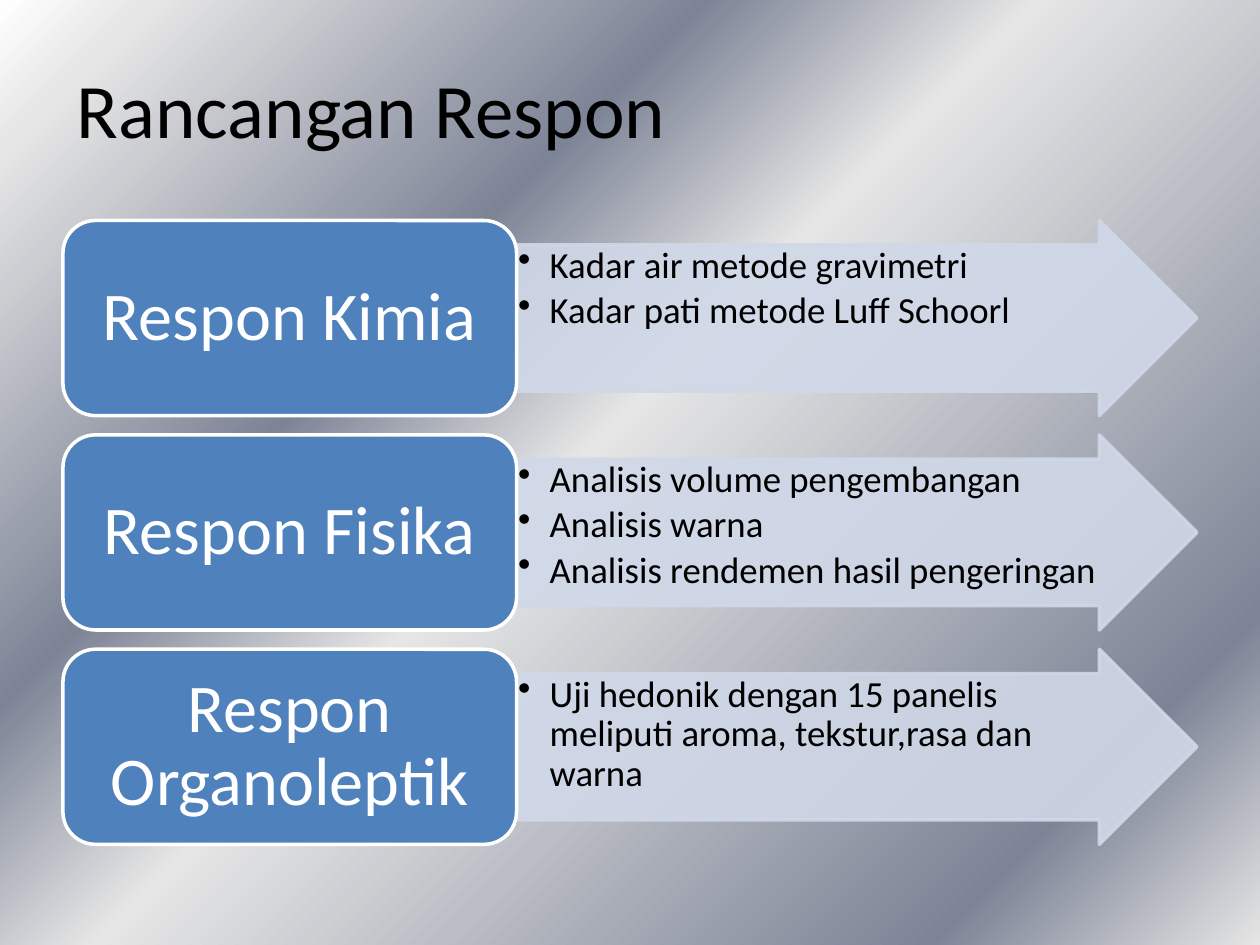
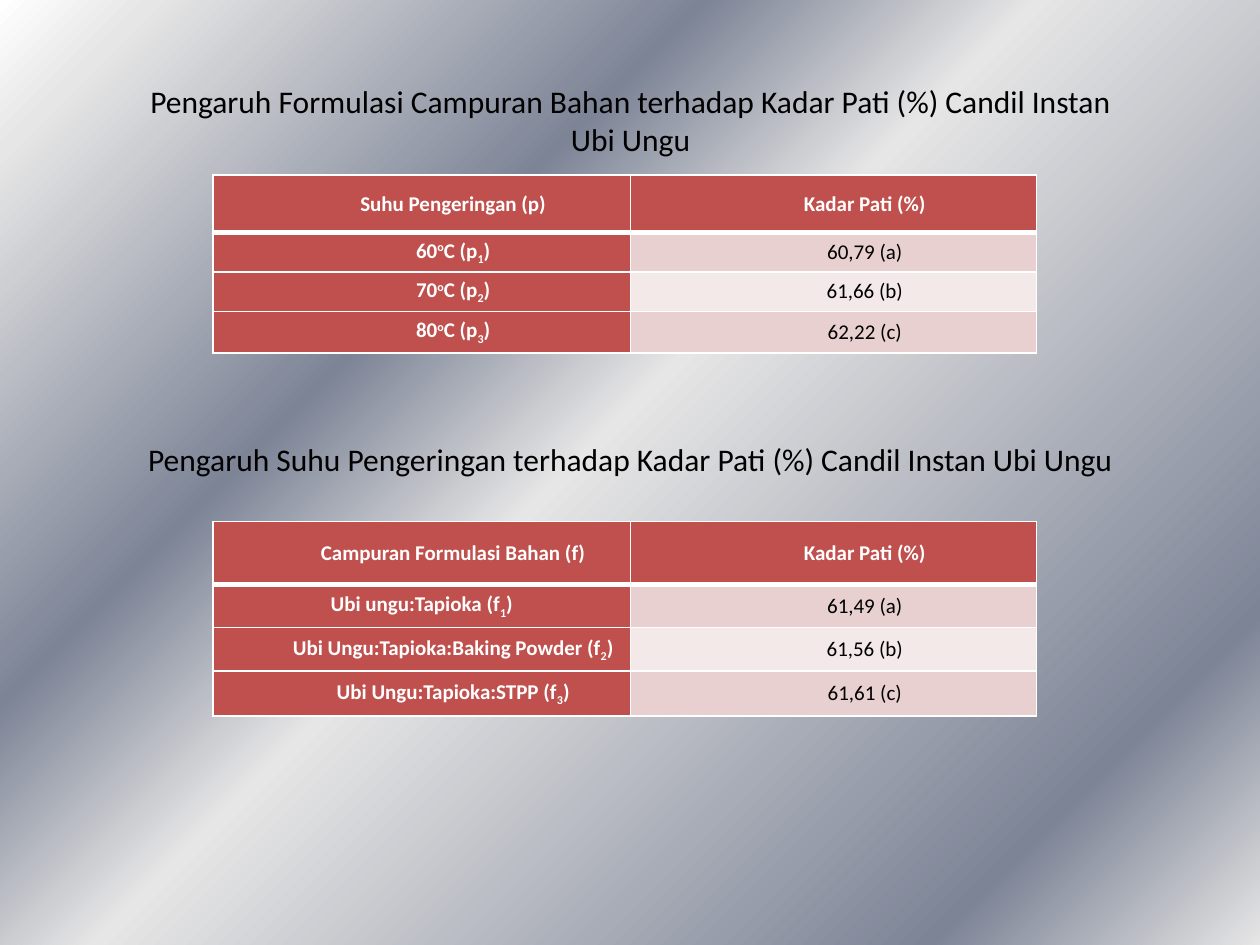
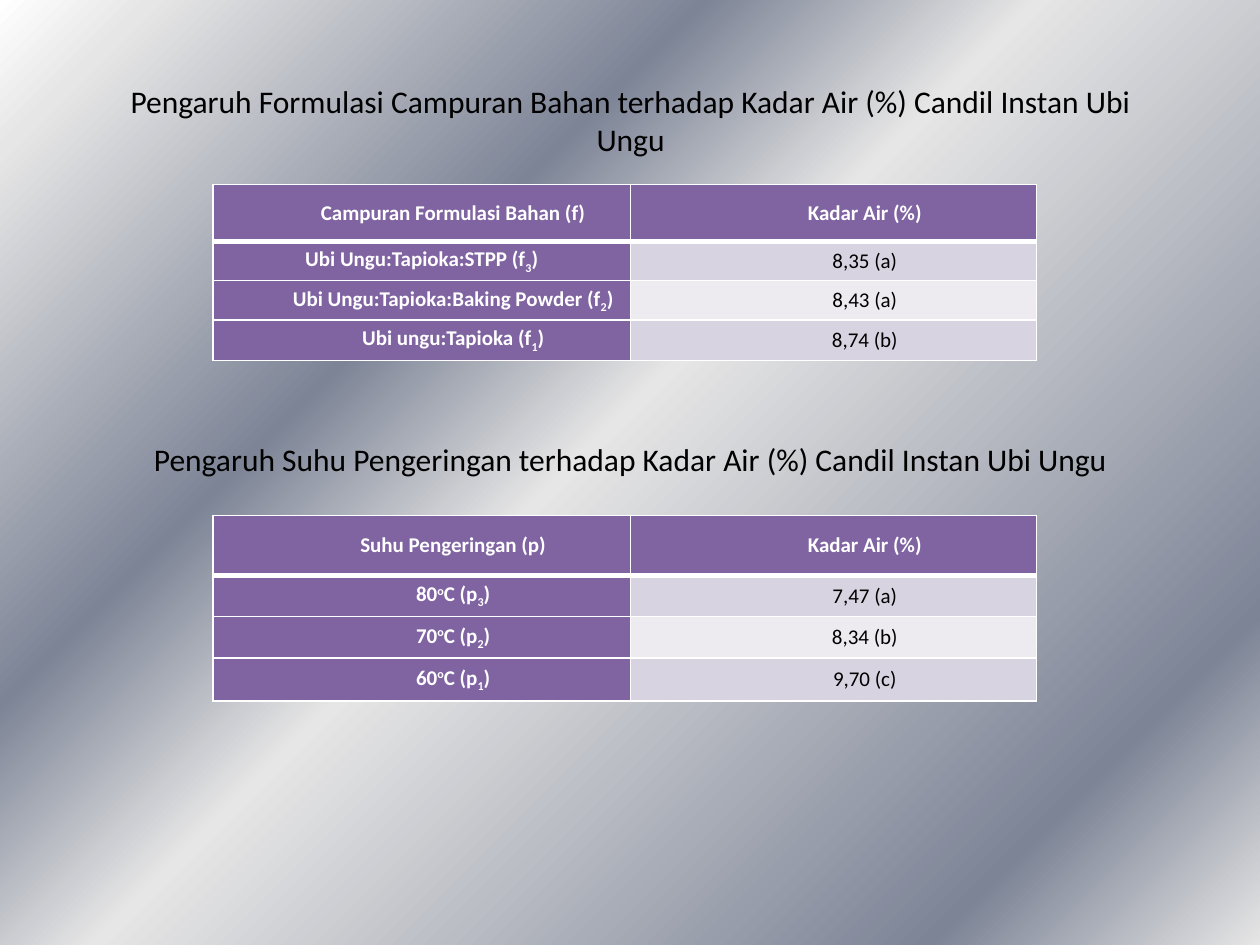
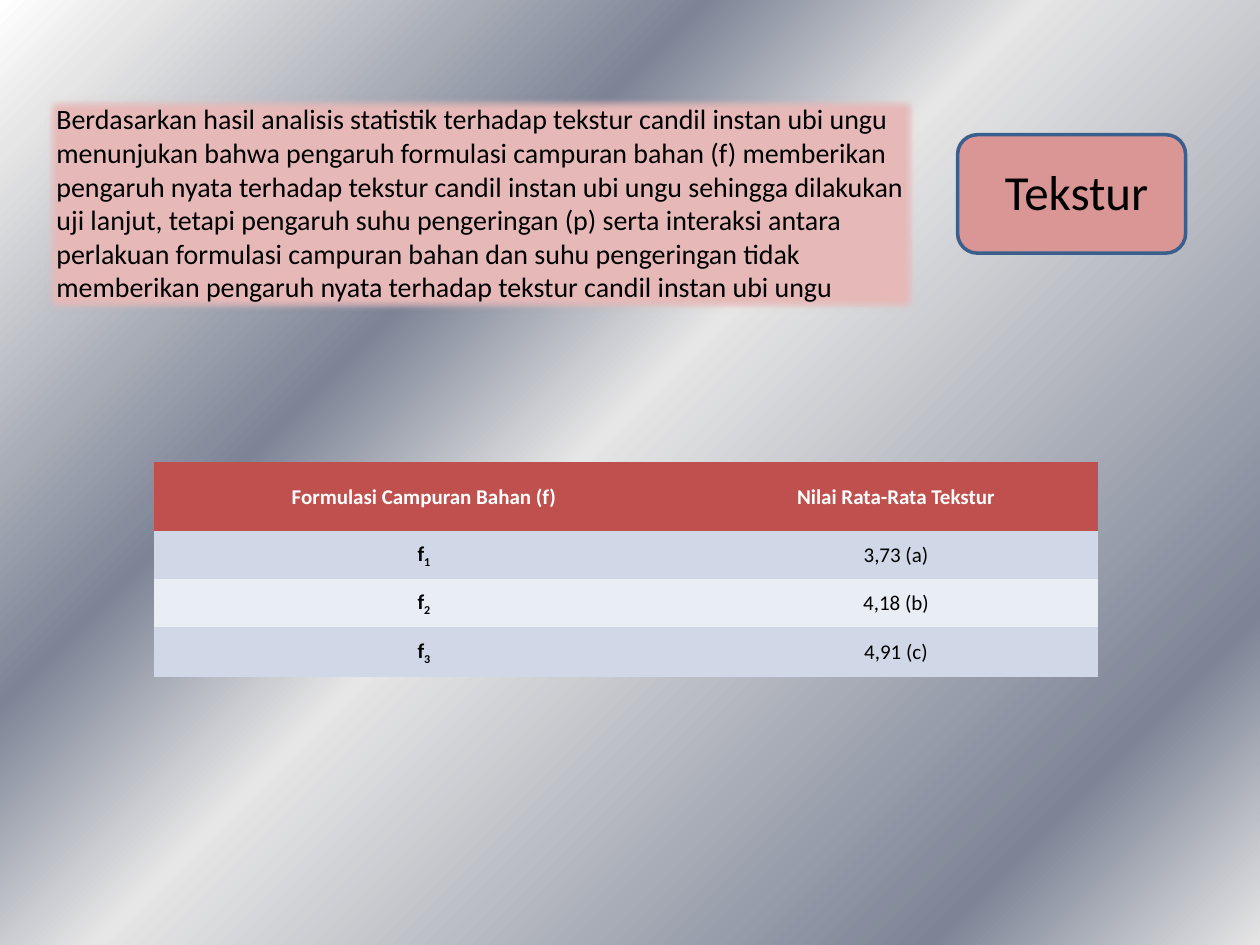
from pptx import Presentation
from pptx.dml.color import RGBColor
from pptx.enum.shapes import MSO_SHAPE
from pptx.enum.text import MSO_ANCHOR, MSO_AUTO_SIZE, PP_ALIGN
from pptx.oxml import parse_xml
from pptx.oxml.ns import nsdecls, qn
from pptx.util import Pt

FONT = "Calibri"
BLACK, WHITE = "000000", "FFFFFF"
RED, PURPLE, BLUE = "C0504D", "8064A2", "4F81BD"
PALE, FAINT = "D0D8E8", "E9EDF4"
STOPS = [(0, WHITE), (7, "E6E6E6"), (32, "7D8496"),
         (47, "E6E6E6"), (85, "7D8496"), (100, "E6E6E6")]
PLAIN = "{2D5ABB26-0587-4C30-8999-92F81FD0307C}"
SHIFTS = {"^": "30000", "_": "-25000"}
INDENT = 36

TITLE_BOX = (65.5, 43.2, 589.7, 72.7)
SUB_BOX = (65.5, 247.7, 589.7, 51.1)
GRID_LEFT = 121.7
GRID_COLS = (238.5, 232)

HEAT = [f"{deg}|^o|C (p|_{num}|)" for deg, num in ((60, 1), (70, 2), (80, 3))]
TAPIOCA = "Ubi ungu:Tapioka (f|_1|)"
POWDER = "Ubi Ungu:Tapioka:Baking Powder (f|_2|)"
STPP = "Ubi Ungu:Tapioka:STPP (f|_3|)"
HEAT_HEAD = "Suhu Pengeringan (p)"
MIX_HEAD = "Campuran Formulasi Bahan (f)"


def color(code):
    return RGBColor.from_string(code)


def xml(text):
    head, tail = text.split(" ", 1)
    return parse_xml(f"{head} {nsdecls('a')} {tail}")


def style(para, size, ink=BLACK, bold=False, align=PP_ALIGN.LEFT):
    para.alignment = align
    font = para.font
    font.name, font.size, font.bold = FONT, Pt(size), bold
    font.color.rgb = color(ink)


def margins(frame, side, top):
    frame.margin_left = frame.margin_right = Pt(side)
    frame.margin_top = frame.margin_bottom = Pt(top)


def place(item, box):
    item.left, item.top, item.width, item.height = map(Pt, box)


def set_backdrop(master):
    master.background.fill.gradient()
    old = master.element.find(".//" + qn("p:bgPr")).find(qn("a:gradFill"))
    stops = "".join(f'<a:gs pos="{pos * 1000}"><a:srgbClr val="{code}"/></a:gs>'
                    for pos, code in STOPS)
    new = xml(f'<a:gradFill rotWithShape="1"><a:gsLst>{stops}</a:gsLst>'
              '<a:path path="circle"><a:fillToRect r="100000" b="100000"/></a:path>'
              '<a:tileRect l="-100000" t="-100000"/></a:gradFill>')
    old.getparent().replace(old, new)


def set_text(frame, text, size, align):
    frame.word_wrap = True
    frame.auto_size = MSO_AUTO_SIZE.NONE
    frame.vertical_anchor = MSO_ANCHOR.TOP
    frame.text = text
    style(frame.paragraphs[0], size, align=align)


def add_page(deck, title, box, size, align=PP_ALIGN.CENTER):
    slide = deck.slides.add_slide(deck.slide_layouts[5])
    place(slide.shapes.title, box)
    set_text(slide.shapes.title.text_frame, title, size, align)
    return slide


def add_block(slide, kind, box, fill, line):
    block = slide.shapes.add_shape(kind, *map(Pt, box))
    block.shadow.inherit = False
    block.fill.solid()
    block.fill.fore_color.rgb = color(fill)
    block.line.color.rgb = color(line)
    block.line.width = Pt(2)
    return block


def add_bullet(para):
    props = para._p.get_or_add_pPr()
    props.set("marL", str(Pt(18)))
    props.set("indent", str(Pt(-18)))
    props.insert_element_before(xml('<a:buChar char="•"/>'), "a:tabLst", "a:defRPr")


def add_response(slide, box, name, items):
    left, top, width, height = box
    split = width * 0.4
    arrow = add_block(slide, MSO_SHAPE.RIGHT_ARROW,
                      (left + split, top, width - split, height), PALE, PALE)
    arrow.adjustments[0], arrow.adjustments[1] = 0.75, 0.5
    for tint in arrow._element.spPr.iter(qn("a:srgbClr")):
        tint.append(xml('<a:alpha val="90000"/>'))
    frame = arrow.text_frame
    frame.word_wrap = True
    frame.vertical_anchor = MSO_ANCHOR.TOP
    margins(frame, 0.95, 0.95)
    frame.text = "\n".join(items)
    for para in frame.paragraphs:
        para.level = 1
        para.line_spacing = 0.9
        para.space_after = Pt(3.15)
        style(para, 21)
        add_bullet(para)

    label = add_block(slide, MSO_SHAPE.ROUNDED_RECTANGLE,
                      (left, top, split, height), BLUE, WHITE)
    frame = label.text_frame
    frame.word_wrap = True
    frame.vertical_anchor = MSO_ANCHOR.MIDDLE
    margins(frame, 11.7, 5.85)
    frame.text = name
    frame.paragraphs[0].line_spacing = 0.9
    style(frame.paragraphs[0], 39, WHITE, align=PP_ALIGN.CENTER)


def add_borders(cell, row):
    widths = {"L": 1, "R": 1, "T": 3 if row == 1 else 1, "B": 3 if row == 0 else 1}
    props = cell._tc.get_or_add_tcPr()
    for spot, (side, width) in enumerate(widths.items()):
        props.insert(spot, xml(
            f'<a:ln{side} w="{Pt(width)}"><a:solidFill><a:srgbClr val="{WHITE}"/>'
            f'</a:solidFill></a:ln{side}>'))


def fill_cell(cell, text, fill, ink, bold):
    cell.fill.solid()
    cell.fill.fore_color.rgb = color(fill)
    cell.vertical_anchor = MSO_ANCHOR.MIDDLE
    margins(cell, 4.9, 0)
    para = cell.text_frame.paragraphs[0]
    style(para, 12, ink, bold, PP_ALIGN.CENTER)
    if not text.startswith("<"):
        para._p.get_or_add_pPr().set("marL", str(Pt(INDENT)))
    for part in text.lstrip("<").split("|"):
        run = para.add_run()
        run.text = part.lstrip("^_")
        if part[0] in SHIFTS:
            run._r.get_or_add_rPr().set("baseline", SHIFTS[part[0]])


def add_grid(slide, spot, cols, heights, rows, head, bands, side=None):
    box = (*spot, sum(cols), sum(heights))
    table = slide.shapes.add_table(len(rows), len(cols), *map(Pt, box)).table
    table._tbl.tblPr.find(qn("a:tableStyleId")).text = PLAIN
    table.horz_banding = False
    for col, width in zip(table.columns, cols):
        col.width = Pt(width)
    for num, (row, texts) in enumerate(zip(table.rows, rows)):
        row.height = Pt(heights[num])
        for pos, text in enumerate(texts):
            cell = table.cell(num, pos)
            dark = num == 0 or (pos == 0 and side)
            fill = head if dark else bands[(num - 1) % 2]
            fill_cell(cell, text, fill, WHITE if dark else BLACK, num == 0 or pos == 0)
            if side:
                add_borders(cell, num)


def add_pair(deck, topic, head, bands, upper, lower):
    ending = f"terhadap {topic} (%) Candil Instan Ubi Ungu"
    slide = add_page(deck, f"Pengaruh Formulasi Campuran Bahan {ending}", TITLE_BOX, 18)
    note = slide.shapes.add_textbox(*map(Pt, SUB_BOX))
    set_text(note.text_frame, f"Pengaruh Suhu Pengeringan {ending}", 18, PP_ALIGN.CENTER)
    for top, heights, first, rows in (upper, lower):
        add_grid(slide, (GRID_LEFT, top), GRID_COLS, heights,
                 [(first, f"{topic} (%)"), *rows], head, bands, side=True)


def add_responses(deck):
    slide = add_page(deck, "Rancangan Respon", (36.7, 31.7, 436.3, 60.5), 44, PP_ALIGN.LEFT)
    groups = [
        ("Respon Kimia", ["Kadar air metode gravimetri", "Kadar pati metode Luff Schoorl"]),
        ("Respon Fisika", ["Analisis volume pengembangan", "Analisis warna",
                           "Analisis rendemen hasil pengeringan"]),
        ("Respon Organoleptik",
         ["Uji hedonik dengan 15 panelis meliputi aroma, tekstur,rasa dan warna"]),
    ]
    for num, (name, items) in enumerate(groups):
        add_response(slide, (36, 126 + num * 122.5, 648, 111.5), name, items)


def add_texture(deck):
    slide = add_page(deck, "Tekstur", (558.7, 88.6, 113, 41), 28)
    panel = add_block(slide, MSO_SHAPE.RECTANGLE, (25.2, 54.7, 499, 123.8), "E6B9B8", PURPLE)
    panel._element.spPr.find(qn("a:effectLst")).append(xml('<a:softEdge rad="63500"/>'))
    set_text(panel.text_frame,
             "Berdasarkan hasil analisis statistik terhadap tekstur candil instan ubi ungu "
             "menunjukan bahwa pengaruh formulasi campuran bahan (f) memberikan pengaruh "
             "nyata terhadap tekstur candil instan ubi ungu sehingga dilakukan uji lanjut, "
             "tetapi pengaruh suhu pengeringan (p) serta interaksi antara perlakuan formulasi "
             "campuran bahan dan suhu pengeringan tidak memberikan pengaruh nyata terhadap "
             "tekstur candil instan ubi ungu", 16, PP_ALIGN.LEFT)
    add_block(slide, MSO_SHAPE.ROUNDED_RECTANGLE, (547.2, 77, 130.3, 67.7), "D99694", "3A5F8C")
    title = slide.shapes.title._element
    title.getparent().append(title)
    rows = [("Formulasi Campuran Bahan (f)", "Nilai Rata-Rata Tekstur"),
            ("f|_1", "3,73 (a)"), ("f|_2", "4,18 (b)"), ("f|_3", "4,91 (c)")]
    add_grid(slide, (87.8, 264.2), (273, 266.5), (39.5, 27.4, 27.4, 28.6),
             rows, RED, (PALE, FAINT))


def main():
    deck = Presentation()
    deck.slide_width, deck.slide_height = Pt(720), Pt(540)
    set_backdrop(deck.slide_master)
    add_responses(deck)
    add_pair(deck, "Kadar Pati", RED, ("E8D0D0", "F4E9E9"),
             (100, (33, 22.5, 22.5, 23.7), HEAT_HEAD,
              zip(HEAT, ("60,79 (a)", "61,66 (b)", "62,22 (c)"))),
             (298, (36, 24.7, 24.7, 25.9), MIX_HEAD,
              zip(("<" + TAPIOCA, POWDER, STPP), ("61,49 (a)", "61,56 (b)", "61,61 (c)"))))
    add_pair(deck, "Kadar Air", PURPLE, ("D8D3E0", "EDEAF0"),
             (105.5, (32.5, 22.4, 22.4, 23.3), MIX_HEAD,
              zip(("<" + STPP, POWDER, TAPIOCA), ("8,35 (a)", "8,43 (a)", "8,74 (b)"))),
             (294.5, (34.3, 23.6, 23.6, 24.5), HEAT_HEAD,
              zip(reversed(HEAT), ("7,47 (a)", "8,34 (b)", "9,70 (c)"))))
    add_texture(deck)
    deck.save("out.pptx")


if __name__ == "__main__":
    main()
